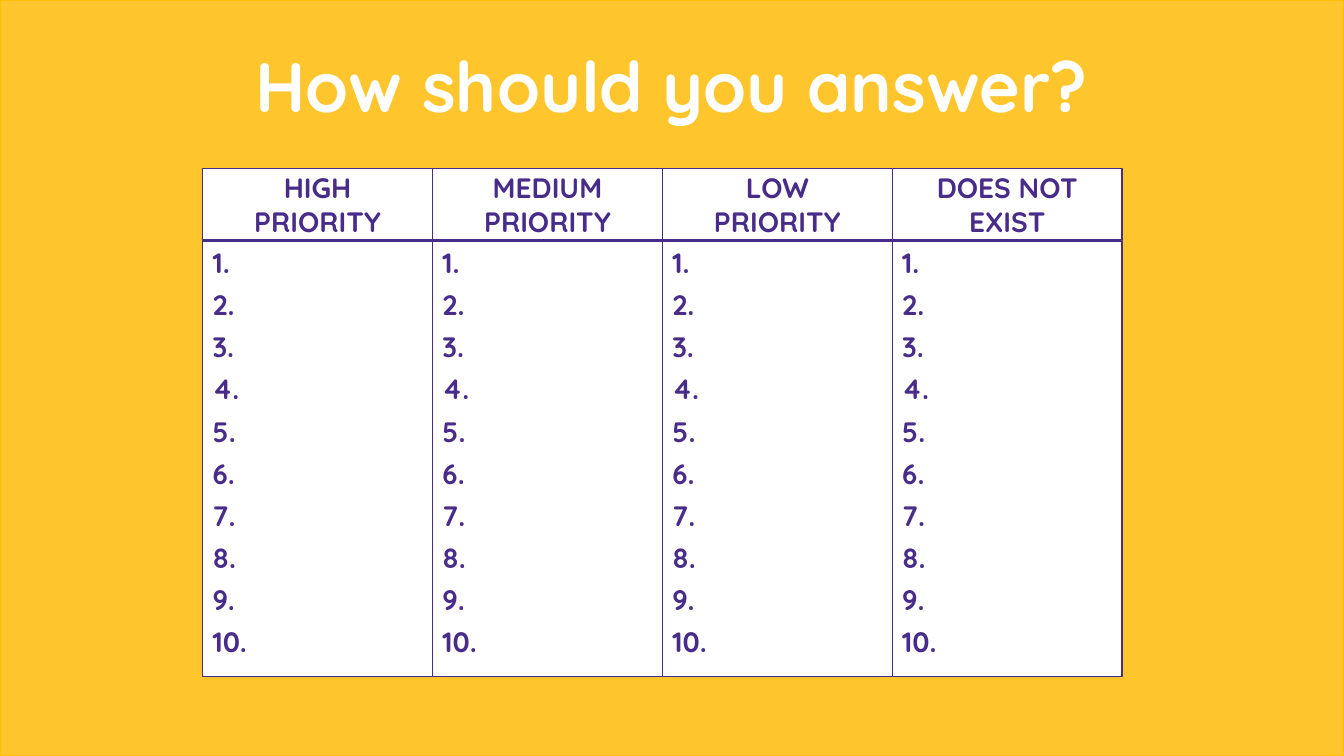
"""Build a slide with four priority columns, each holding ten numbered answer lines."""
from pptx import Presentation
from pptx.dml.color import RGBColor
from pptx.enum.shapes import MSO_SHAPE
from pptx.enum.text import MSO_ANCHOR, PP_ALIGN
from pptx.util import Inches, Pt

YELLOW = RGBColor(0xFE, 0xC5, 0x2C)
AMBER = RGBColor(0xFF, 0xC0, 0x00)
PURPLE = RGBColor(0x48, 0x2C, 0x89)
WHITE = RGBColor(0xFF, 0xFF, 0xFF)

SLIDE_WIDTH, SLIDE_HEIGHT = 13.33, 7.5
COLUMN_LEFT, COLUMN_WIDTH = 2.01, 2.28
HEADER_TOP, HEADER_HEIGHT = 1.67, 0.71
LIST_TOP, LIST_HEIGHT = 2.39, 4.32

HEADINGS = ["HIGH\nPRIORITY", "MEDIUM PRIORITY", "LOW\nPRIORITY", "DOES NOT EXIST"]
NUMBERS = "\n".join(f"{number}." for number in range(1, 11))


def add_panel(left, top, width, height, fill, line):
    shape = slide.shapes.add_shape(
        MSO_SHAPE.RECTANGLE, Inches(left), Inches(top), Inches(width), Inches(height))
    shape.shadow.inherit = False
    shape.fill.solid()
    shape.fill.fore_color.rgb = fill
    shape.line.color.rgb = line
    shape.line.width = Pt(1)
    return shape


def write(shape, text, size, color, alignment, anchor, space_before=0):
    frame = shape.text_frame
    frame.word_wrap = True
    frame.vertical_anchor = anchor
    frame.text = text
    font_format = {"name": "Quicksand", "size": Pt(size), "bold": True}
    for index, paragraph in enumerate(frame.paragraphs):
        paragraph.alignment = alignment
        if index and space_before:
            paragraph.space_before = Pt(space_before)
        for run in paragraph.runs:
            for attribute, value in font_format.items():
                setattr(run.font, attribute, value)
            run.font.color.rgb = color


presentation = Presentation()
presentation.slide_width = Inches(SLIDE_WIDTH)
presentation.slide_height = Inches(SLIDE_HEIGHT)
slide = presentation.slides.add_slide(presentation.slide_layouts[6])

add_panel(0, 0, SLIDE_WIDTH, SLIDE_HEIGHT, YELLOW, AMBER)

title = slide.shapes.add_textbox(Inches(1.9), Inches(0.37), Inches(9.53), Inches(0.94))
write(title, "How should you answer?", 50, WHITE, PP_ALIGN.CENTER, MSO_ANCHOR.TOP)

for column, heading in enumerate(HEADINGS):
    left = COLUMN_LEFT + column * COLUMN_WIDTH
    header = add_panel(left, HEADER_TOP, COLUMN_WIDTH, HEADER_HEIGHT, WHITE, PURPLE)
    write(header, heading, 20, PURPLE, PP_ALIGN.CENTER, MSO_ANCHOR.MIDDLE)
    answers = add_panel(left, LIST_TOP, COLUMN_WIDTH, LIST_HEIGHT, WHITE, PURPLE)
    write(answers, NUMBERS, 20, PURPLE, PP_ALIGN.LEFT, MSO_ANCHOR.TOP, space_before=6)

presentation.save("out.pptx")
